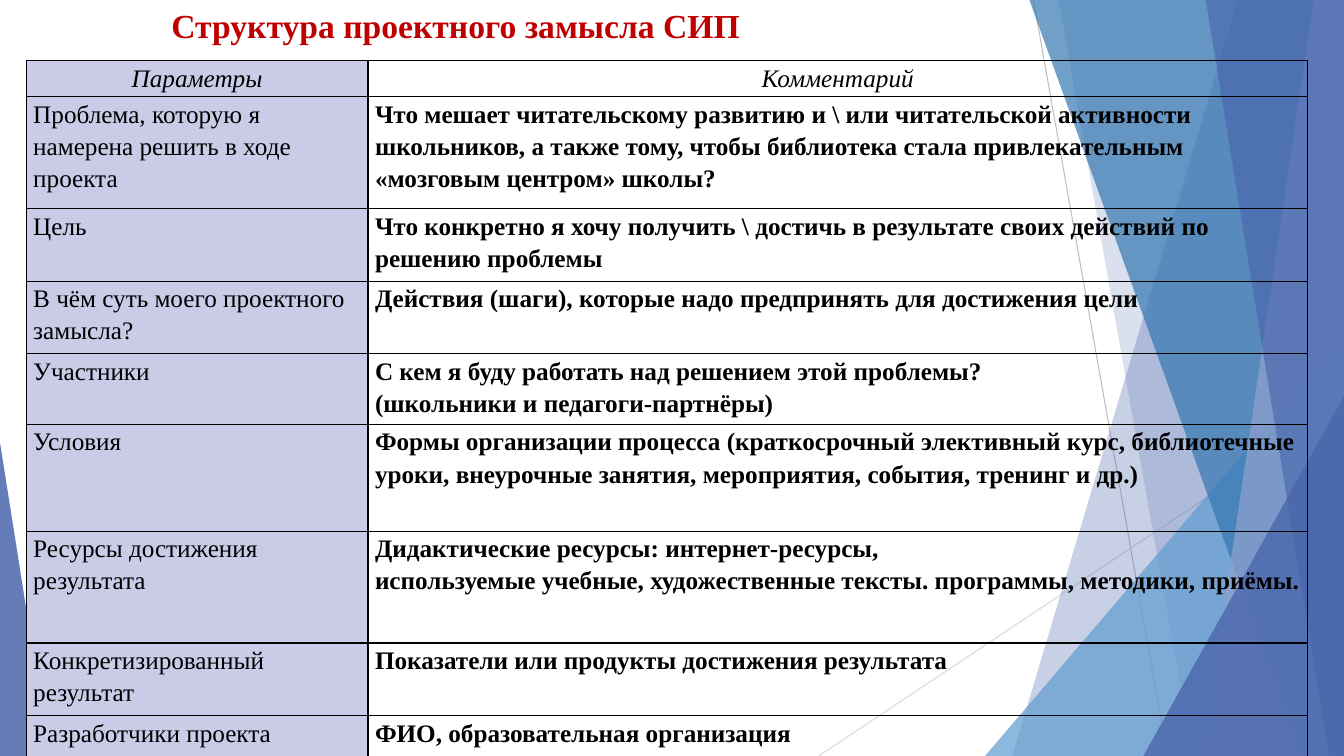
from lxml.etree import SubElement
from pptx import Presentation
from pptx.dml.color import RGBColor
from pptx.enum.shapes import MSO_CONNECTOR, MSO_SHAPE
from pptx.enum.text import MSO_ANCHOR, PP_ALIGN
from pptx.oxml.ns import qn
from pptx.util import Inches, Pt

WIDTH, HEIGHT = 13.33, 7.5
FONT = "Times New Roman"
BLACK = RGBColor(0x00, 0x00, 0x00)
RED = RGBColor(0xC0, 0x00, 0x00)
LAVENDER = RGBColor(0xC9, 0xCB, 0xE7)
INDIGO = RGBColor(0x4A, 0x66, 0xAC)
SKY = RGBColor(0x62, 0x9D, 0xD1)
BLUE = RGBColor(0x34, 0x77, 0xB2)
PALE_INDIGO = RGBColor(0x90, 0xA2, 0xCF)
GREY = RGBColor(0xBF, 0xBF, 0xBF)
LIGHT_GREY = RGBColor(0xD9, 0xD9, 0xD9)


def add_run(paragraph, text, size, color, bold=False, italic=False):
    run = paragraph.add_run()
    run.text = text
    run.font.name = FONT
    run.font.size = Pt(size)
    run.font.color.rgb = color
    run.font.bold = bold
    run.font.italic = italic


presentation = Presentation()
presentation.slide_width = Inches(WIDTH)
presentation.slide_height = Inches(HEIGHT)
slide = presentation.slides.add_slide(presentation.slide_layouts[5])
shapes = slide.shapes

# Title
title = shapes.title
title.left, title.top = Inches(1.6), Inches(0)
title.width, title.height = Inches(10.16), Inches(0.68)
title.text_frame.word_wrap = True
title.text_frame.vertical_anchor = MSO_ANCHOR.TOP
paragraph = title.text_frame.paragraphs[0]
paragraph.alignment = PP_ALIGN.LEFT
add_run(paragraph, "Структура проектного замысла СИП", 24, RED, bold=True)

# Thin background lines
for start_x, start_y, end_x, color in [
    (10.25, 0, 11.58, GREY),
    (WIDTH, 4.03, 8.12, LIGHT_GREY),
]:
    line = shapes.add_connector(
        MSO_CONNECTOR.STRAIGHT,
        Inches(start_x), Inches(start_y), Inches(end_x), Inches(HEIGHT),
    )
    line.line.color.rgb = color
    line.line.width = Pt(0.75)
    SubElement(line.element.spPr, qn("a:effectLst"))

# Facets, back to front. A band runs from its top x and bottom x to the right edge;
# a triangle has left, top, width and the position of its apex, and stands on the bottom edge.
facets = [
    ("band", (12.28, 10.04), INDIGO, 30),
    ("band", (10.5, 11.83), INDIGO, 20),
    ("triangle", (9.77, 3.33, 3.56, 1), SKY, 72),
    ("band", (10.21, 12.91), BLUE, 70),
    ("band", (13.03, 11.92), PALE_INDIGO, 70),
    ("band", (11.96, 13.18), INDIGO, 65),
    ("triangle", (11.34, 3.93, 1.99, 1), INDIGO, 80),
    ("triangle", (0, 4.39, 0.49, 0), INDIGO, 85),
]
for kind, geometry, color, opacity in facets:
    if kind == "band":
        top_x, bottom_x = geometry
        builder = shapes.build_freeform(Inches(top_x), Inches(0))
        corners = [(WIDTH, 0), (WIDTH, HEIGHT), (bottom_x, HEIGHT)]
        builder.add_line_segments([(Inches(x), Inches(y)) for x, y in corners])
        facet = builder.convert_to_shape()
    else:
        left, top, width, apex = geometry
        facet = shapes.add_shape(
            MSO_SHAPE.ISOSCELES_TRIANGLE,
            Inches(left), Inches(top), Inches(width), Inches(HEIGHT - top),
        )
        facet.adjustments[0] = apex
    facet.shadow.inherit = False
    facet.line.fill.background()
    facet.fill.solid()
    facet.fill.fore_color.rgb = color
    fill_color = facet.element.spPr.find(".//" + qn("a:srgbClr"))
    SubElement(fill_color, qn("a:alpha"), val=str(opacity * 1000))

# Table: row height, parameter, paragraphs of the comment
rows = [
    (0.36, "Параметры", ["Комментарий"]),
    (1.11, "Проблема, которую я намерена решить в ходе проекта",
     ["Что мешает читательскому развитию и \\ или читательской активности школьников, "
      "а также тому, чтобы библиотека стала привлекательным «мозговым центром» школы?"]),
    (0.72, "Цель",
     ["Что конкретно я хочу получить \\ достичь в результате своих действий "
      "по решению проблемы"]),
    (0.72, "В чём суть моего проектного замысла?",
     ["Действия (шаги), которые надо предпринять для достижения цели"]),
    (0.7, "Участники",
     ["С кем я буду работать над решением этой проблемы?",
      "(школьники и педагоги-партнёры)"]),
    (1.06, "Условия",
     ["Формы организации процесса (краткосрочный элективный курс, библиотечные уроки, "
      "внеурочные занятия, мероприятия, события, тренинг и др.)"]),
    (1.11, "Ресурсы достижения результата",
     ["Дидактические ресурсы: интернет-ресурсы,",
      "используемые учебные, художественные тексты. программы, методики, приёмы."]),
    (0.72, "Конкретизированный результат",
     ["Показатели или продукты достижения результата"]),
    (0.55, "Разработчики проекта", ["ФИО, образовательная организация"]),
]
column_widths = [3.39, 9.32]
table = shapes.add_table(
    len(rows), 2, Inches(0.26), Inches(0.6),
    Inches(sum(column_widths)), Inches(sum(row[0] for row in rows)),
).table
table.first_row = table.horz_banding = False
for column, width in zip(table.columns, column_widths):
    column.width = Inches(width)

for row_index, (height, parameter, comment) in enumerate(rows):
    table.rows[row_index].height = Inches(height)
    is_header = row_index == 0
    for column_index, texts in enumerate([[parameter], comment]):
        cell = table.cell(row_index, column_index)
        cell.margin_left = cell.margin_right = Inches(0.07)
        cell.margin_top = cell.margin_bottom = 0
        cell.vertical_anchor = MSO_ANCHOR.TOP
        properties = cell._tc.get_or_add_tcPr()
        for side in ("a:lnL", "a:lnR", "a:lnT", "a:lnB"):
            border = SubElement(properties, qn(side), w=str(Pt(1)))
            border_fill = SubElement(border, qn("a:solidFill"))
            SubElement(border_fill, qn("a:srgbClr"), val=str(BLACK))
        if column_index == 0:
            cell.fill.solid()
            cell.fill.fore_color.rgb = LAVENDER
        else:
            cell.fill.background()
        for text_index, text in enumerate(texts):
            frame = cell.text_frame
            paragraph = frame.add_paragraph() if text_index else frame.paragraphs[0]
            paragraph.alignment = PP_ALIGN.CENTER if is_header else PP_ALIGN.LEFT
            paragraph.line_spacing = 1.15
            add_run(paragraph, text, 18, BLACK,
                    bold=column_index == 1 and not is_header, italic=is_header)

presentation.save("out.pptx")
